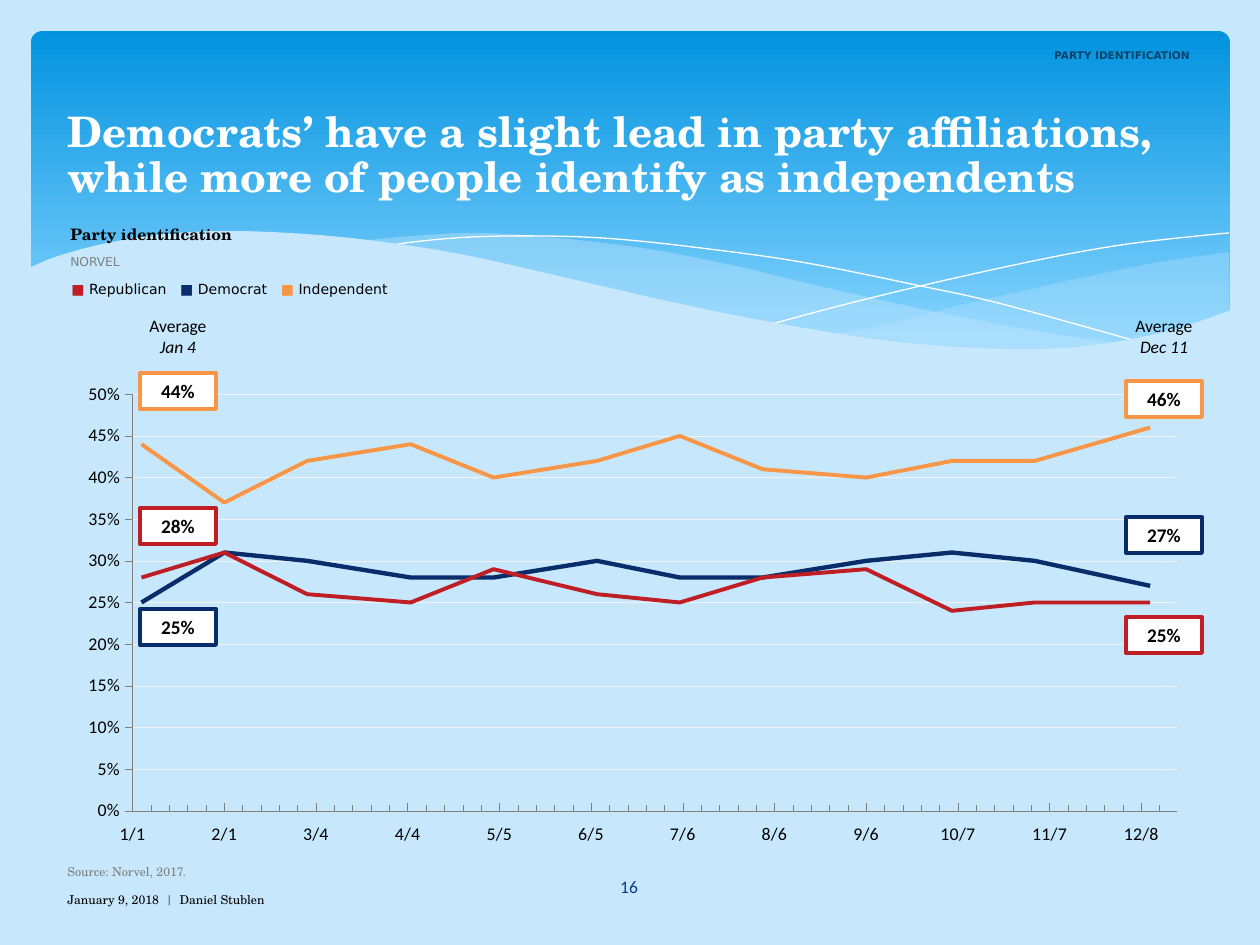
from lxml import etree
from pptx import Presentation
from pptx.chart.data import XyChartData
from pptx.dml.color import RGBColor
from pptx.enum.chart import XL_CHART_TYPE, XL_TICK_LABEL_POSITION, XL_TICK_MARK
from pptx.enum.shapes import MSO_SHAPE
from pptx.enum.text import MSO_ANCHOR, MSO_AUTO_SIZE, PP_ALIGN
from pptx.oxml import parse_xml
from pptx.oxml.ns import nsdecls, qn
from pptx.util import Emu, Pt

PX = 914400 / 126
LEFT, CENTER, RIGHT = PP_ALIGN.LEFT, PP_ALIGN.CENTER, PP_ALIGN.RIGHT
TOP, MIDDLE = MSO_ANCHOR.TOP, MSO_ANCHOR.MIDDLE
INSIDE, OUTSIDE, NO_TICK = XL_TICK_MARK.INSIDE, XL_TICK_MARK.OUTSIDE, XL_TICK_MARK.NONE
LOW = XL_TICK_LABEL_POSITION.LOW
SERIF, SANS, BODY = "TeX Gyre Schola", "DejaVu Sans", "Calibri"
COLORS = {
    "sky": "C6E7FC", "deep": "0293E0", "light": "83D3FE", "white": "FFFFFF",
    "black": "000000", "gray": "808080", "dark gray": "595959", "grid": "F2F2F2",
    "tag": "06436B", "page": "073E87",
    "Republican": "BF1E24", "Independent": "F79646", "Democrat": "092D6B",
}

SURVEY_DAYS = [42739, 42767, 42795, 42830, 42858, 42893,
               42921, 42949, 42984, 43013, 43041, 43080]
SHARES = {
    "Republican": [.28, .31, .26, .25, .29, .26, .25, .28, .29, .24, .25, .25],
    "Independent": [.44, .37, .42, .44, .40, .42, .45, .41, .40, .42, .42, .46],
    "Democrat": [.25, .31, .30, .28, .28, .30, .28, .28, .30, .31, .30, .27],
}
LINE_WIDTHS = {"Republican": 2.25, "Independent": 2.25, "Democrat": 2.5}
BOX_TOPS = {"Republican": (508, 617), "Independent": (373, 381), "Democrat": (609, 517)}

RIGHT_SWELL = [
    [(1229, 252), (1160, 262), (1085, 277), (1014, 293), (949, 308), (890, 324), (833, 334)],
    [(833, 334), (906, 342), (969, 348), (1038, 349), (1099, 345), (1160, 334), (1229, 311)],
]
LEFT_SWELL = [
    [(360, 241), (413, 236), (479, 233), (557, 238), (648, 249), (736, 266),
     (793, 280), (890, 302), (977, 320), (1055, 334), (1125, 344)],
    [(1125, 344), (1056, 350), (974, 349), (893, 343), (799, 329), (713, 312),
     (619, 292), (566, 280), (509, 266), (431, 251), (360, 241)],
]
FALLING_LINE = [[(389, 246), (413, 242), (471, 237), (546, 236), (616, 239), (701, 248),
                 (801, 262), (916, 285), (1002, 304), (1143, 343)]]
RISING_LINE = [[(772, 324), (847, 304), (942, 281), (1053, 257), (1128, 244),
                (1198, 236), (1229, 233)]]
FRONT_WAVE = [
    [(29, 268), (58, 256), (107, 243), (166, 234), (223, 231), (290, 233), (368, 240),
     (460, 254), (563, 277), (667, 301), (760, 320), (867, 338), (959, 347),
     (1037, 349), (1102, 344), (1172, 330), (1231, 310)],
    [(1231, 415), (29, 415)],
]


def px(value):
    return Emu(round(value * PX))


def rgb(name):
    return RGBColor.from_string(COLORS[name])


def assign(target, values):
    for attribute, value in values.items():
        setattr(target, attribute, value)


def smooth(knots, steps=5):
    """Catmull-Rom points through the knots; two knots stay a straight line."""
    if len(knots) < 3:
        return knots
    padded = [knots[0], *knots, knots[-1]]
    points = [knots[0]]
    for a, b, c, d in zip(padded, padded[1:], padded[2:], padded[3:]):
        for step in range(1, steps + 1):
            t = step / steps
            points.append(tuple(
                (2 * q + (r - p) * t + (2 * p - 5 * q + 4 * r - s) * t ** 2
                 + (3 * q - p - 3 * r + s) * t ** 3) / 2
                for p, q, r, s in zip(a, b, c, d)))
    return points


class SlideBuilder:
    def __init__(self, slide):
        self.slide = slide
        self.shapes = slide.shapes
        slide.background.fill.solid()
        slide.background.fill.fore_color.rgb = rgb("sky")

    def set_text(self, shape, paragraphs, size, font, align=LEFT, anchor=TOP,
                 spacing=None, wrap=True):
        """Each paragraph is a list of (text, colour, font options)."""
        frame = shape.text_frame
        assign(frame, {"word_wrap": wrap, "auto_size": MSO_AUTO_SIZE.NONE,
                       "vertical_anchor": anchor})
        for index, runs in enumerate(paragraphs):
            paragraph = frame.add_paragraph() if index else frame.paragraphs[0]
            assign(paragraph, {"alignment": align, "line_spacing": spacing})
            for text, color, options in runs:
                run = paragraph.add_run()
                run.text = text
                assign(run.font, {"size": Pt(size), "name": font, **options})
                run.font.color.rgb = rgb(color)

    def text(self, box, paragraphs, size, font, **layout):
        self.set_text(self.shapes.add_textbox(*map(px, box)), paragraphs, size, font, **layout)

    def title(self, box, text):
        title = self.shapes.title
        assign(title, dict(zip(("left", "top", "width", "height"), map(px, box))))
        self.shapes._spTree.append(title._element)  # bring in front of the backdrop
        self.set_text(title, [[(text, "white", {"bold": True})]], 24, SERIF, spacing=0.9)

    def panel(self, box):
        panel = self.shapes.add_shape(MSO_SHAPE.ROUNDED_RECTANGLE, *map(px, box))
        panel.adjustments[0] = 0.034
        panel.shadow.inherit = False
        panel.line.fill.background()
        panel.fill.gradient()
        panel.fill.gradient_angle = 270
        for stop, color, position in zip(panel.fill.gradient_stops, ("deep", "light"), (0, 0.9)):
            stop.color.rgb = rgb(color)
            stop.position = position

    def wave(self, curves, fill=None, opacity=100):
        """A filled outline, or a white hairline when there is no fill."""
        points = [(px(x), px(y)) for curve in curves for x, y in smooth(curve)]
        builder = self.shapes.build_freeform(*points[0])
        builder.add_line_segments(points[1:], close=fill is not None)
        wave = builder.convert_to_shape()
        wave.shadow.inherit = False
        if fill is None:
            wave.fill.background()
            wave.line.color.rgb = rgb("white")
            wave.line.width = Pt(0)
            return
        wave.line.fill.background()
        wave.fill.solid()
        wave.fill.fore_color.rgb = rgb(fill)
        if opacity < 100:
            color = wave._element.spPr.find(qn("a:solidFill"))[0]
            etree.SubElement(color, qn("a:alpha")).set("val", str(opacity * 1000))

    def value_box(self, x, y, share, party):
        box = self.shapes.add_shape(MSO_SHAPE.RECTANGLE, *map(px, (x, y, 76, 36)))
        box.shadow.inherit = False
        box.fill.solid()
        box.fill.fore_color.rgb = rgb("white")
        box.line.color.rgb = rgb(party)
        box.line.width = Pt(2.25)
        self.set_text(box, [[(f"{share:.0%}", "black", {"bold": True})]], 11, BODY,
                      align=CENTER, anchor=MIDDLE)

    def trend_chart(self, box):
        data = XyChartData()
        for party, shares in SHARES.items():
            series = data.add_series(party, number_format="0%")
            for day, share in zip(SURVEY_DAYS, shares):
                series.add_data_point(day, share)
        chart = self.shapes.add_chart(
            XL_CHART_TYPE.XY_SCATTER_LINES_NO_MARKERS, *map(px, box), data).chart
        assign(chart, {"has_legend": False, "has_title": False})
        assign(chart.font, {"size": Pt(10.2), "name": BODY})
        chart.font.color.rgb = rgb("black")
        chart.plots[0].vary_by_categories = False
        for series in chart.plots[0].series:
            series.smooth = False
            series.format.line.color.rgb = rgb(series.name)
            series.format.line.width = Pt(LINE_WIDTHS[series.name])
        dates, percents = chart.category_axis, chart.value_axis
        assign(dates, {"minimum_scale": 42736, "maximum_scale": 43089, "major_unit": 31,
                       "minor_unit": 6.2, "has_major_gridlines": False,
                       "major_tick_mark": INSIDE, "minor_tick_mark": INSIDE,
                       "tick_label_position": LOW})
        assign(percents, {"minimum_scale": 0, "maximum_scale": 0.5, "major_unit": 0.05,
                          "has_major_gridlines": True, "major_tick_mark": OUTSIDE,
                          "minor_tick_mark": NO_TICK})
        lines = [(dates.format.line, "gray"), (percents.format.line, "gray"),
                 (percents.major_gridlines.format.line, "grid")]
        for line, color in lines:
            line.color.rgb = rgb(color)
            line.width = Pt(0.25)
        for axis, pattern in ((dates, "m/d;@"), (percents, "0%")):
            assign(axis.tick_labels, {"number_format": pattern, "number_format_is_linked": False})
        self.place_plot(chart, {"x": 0.056, "y": 0.117, "w": 0.891, "h": 0.795})

    def place_plot(self, chart, fractions):
        """Fix the inner plot area and clear the chart's background."""
        root = chart._chartSpace
        plot_area = root.chart.plotArea
        for old in plot_area.findall(qn("c:layout")):
            plot_area.remove(old)
        settings = {"layoutTarget": "inner", "xMode": "edge", "yMode": "edge", **fractions}
        entries = "".join(f'<c:{key} val="{value}"/>' for key, value in settings.items())
        plot_area.insert(0, parse_xml(
            f'<c:layout {nsdecls("c")}><c:manualLayout>{entries}</c:manualLayout></c:layout>'))
        root.chart.addnext(parse_xml(
            f'<c:spPr {nsdecls("c", "a")}><a:noFill/><a:ln><a:noFill/></a:ln></c:spPr>'))


def main():
    deck = Presentation()
    assign(deck, {"slide_width": px(1260), "slide_height": px(945)})
    page = SlideBuilder(deck.slides.add_slide(deck.slide_layouts[5]))

    page.panel((31, 31, 1199, 340))
    page.wave(RIGHT_SWELL, "sky", 29)
    page.wave(LEFT_SWELL, "sky", 40)
    page.wave(FALLING_LINE)
    page.wave(RISING_LINE)
    page.wave(FRONT_WAVE, "sky")

    page.title((55, 105, 1147, 84), "Democrats’ have a slight lead in party affiliations, "
               "while more of people identify as independents")
    page.trend_chart((67, 333, 1172, 524))

    bold = {"bold": True}
    page.text((549, 862, 160, 50), [[("16", "page", {})]], 10, BODY, align=CENTER, anchor=MIDDLE)
    legend = []
    for party, gap in (("Republican", "   "), ("Democrat", "   "), ("Independent", "")):
        legend += [("■ ", party, {}), (party + gap, "black", {})]
    page.text((59, 276, 350, 28), [legend], 8, SANS, spacing=0.9, wrap=False)
    page.text((1031, 43, 171, 25), [[("PARTY IDENTIFICATION", "tag", bold)]], 6, SANS,
              align=RIGHT, wrap=False)
    page.text((58, 219, 1134, 32), [[("Party identification", "black", bold)]], 9, SERIF)
    page.text((58, 248, 389, 28), [[("NORVEL", "gray", {})]], 7, SANS)
    page.text((55, 857, 1137, 26), [[("Source: Norvel, 2017.", "gray", {})]], 7, SERIF,
              spacing=1.1)
    page.text((55, 885, 408, 47), [[("January 9, 2018  ", "black", {}), ("| ", "dark gray", {}),
                                    (" Daniel Stublen", "black", {})]], 7, SERIF, spacing=1.1)

    for end, (box_left, date) in enumerate(((140, "Jan 4"), (1126, "Dec 11"))):
        page.text((box_left - 44, 309, 164, 55),
                  [[("Average", "black", {})], [(date, "black", {"italic": True})]],
                  10, BODY, align=CENTER)
        for party, tops in BOX_TOPS.items():
            page.value_box(box_left, tops[end], SHARES[party][-end], party)

    deck.save("out.pptx")


if __name__ == "__main__":
    main()
